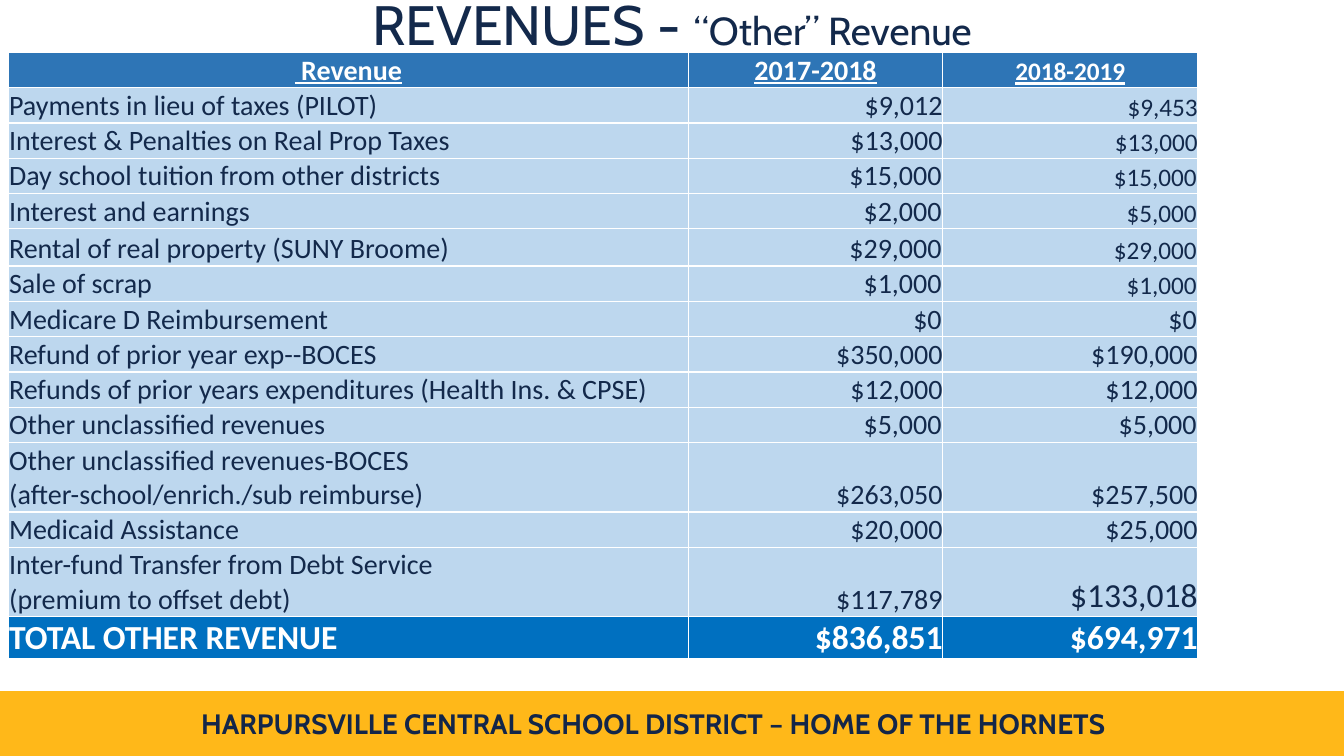
from lxml import etree
from pptx import Presentation
from pptx.dml.color import RGBColor
from pptx.enum.shapes import MSO_SHAPE
from pptx.enum.text import MSO_ANCHOR, MSO_AUTO_SIZE, PP_ALIGN
from pptx.oxml.ns import qn
from pptx.util import Inches, Pt

LEFT, CENTER, RIGHT = PP_ALIGN.LEFT, PP_ALIGN.CENTER, PP_ALIGN.RIGHT
BOTTOM, MIDDLE = MSO_ANCHOR.BOTTOM, MSO_ANCHOR.MIDDLE
NAVY, WHITE, GOLD = "13294B", "FFFFFF", "FFB819"
HEADER_BLUE, BODY_BLUE, TOTAL_BLUE = "2E75B6", "BDD7EE", "0070C0"

# Revenue source, 2017-2018, 2018-2019
ROWS = [
    (" Revenue", "2017-2018", "2018-2019"),
    ("Payments in lieu of taxes (PILOT)", "$9,012", "$9,453"),
    ("Interest & Penalties on Real Prop Taxes", "$13,000", "$13,000"),
    ("Day school tuition from other districts", "$15,000", "$15,000"),
    ("Interest and earnings", "$2,000", "$5,000"),
    ("Rental of real property (SUNY Broome)", "$29,000", "$29,000"),
    ("Sale of scrap", "$1,000", "$1,000"),
    ("Medicare D Reimbursement", "$0", "$0"),
    ("Refund of prior year exp--BOCES", "$350,000", "$190,000"),
    ("Refunds of prior years expenditures (Health Ins. & CPSE)", "$12,000", "$12,000"),
    ("Other unclassified revenues", "$5,000", "$5,000"),
    ("Other unclassified revenues-BOCES\v(after-school/enrich./sub reimburse)",
     "$263,050", "$257,500"),
    ("Medicaid Assistance", "$20,000", "$25,000"),
    ("Inter-fund Transfer from Debt Service\n(premium to offset debt)",
     "$117,789", "$133,018"),
    ("TOTAL OTHER REVENUE", "$836,851", "$694,971"),
]
TOTAL_ROW = len(ROWS) - 1
COLUMN_WIDTHS = [6.75, 2.52, 2.53]
ROW_HEIGHT = 0.35
SPECIAL_HEIGHTS = {5: 0.37, 11: 0.69, 13: 0.69, TOTAL_ROW: 0.41}
FLUSH_ROWS = {1, 2, 8, 9, 11, 12, 13, TOTAL_ROW}


def rgb(value):
    return RGBColor.from_string(value)


def format_font(font, color, **values):
    font.color.rgb = rgb(color)
    for name, value in values.items():
        setattr(font, name, value)


deck = Presentation()
deck.slide_width, deck.slide_height = Inches(13.33), Inches(7.5)
page = deck.slides.add_slide(deck.slide_layouts[5])

# Footer
band = page.shapes.add_shape(MSO_SHAPE.RECTANGLE, 0, Inches(6.86),
                             Inches(13.33), Inches(0.63))
band.shadow.inherit = False
band.fill.solid()
band.fill.fore_color.rgb = rgb(GOLD)
band.line.color.rgb = rgb(GOLD)
band.line.width = Pt(1)

footer = page.shapes.add_textbox(Inches(1.76), Inches(6.96), Inches(9.44), Inches(0.44))
footer.text_frame.word_wrap = True
para = footer.text_frame.paragraphs[0]
para.alignment = CENTER
span = para.add_run()
span.text = "HARPURSVILLE CENTRAL SCHOOL DISTRICT – HOME OF THE HORNETS"
format_font(span.font, "132649", name="Cabin", size=Pt(20), bold=True)

# Title
title = page.shapes.title
title.left, title.top, title.width, title.height = 0, 0, Inches(13.33), Inches(0.54)
title.fill.solid()
title.fill.fore_color.rgb = rgb(WHITE)
title.text_frame.word_wrap = True
title.text_frame.auto_size = MSO_AUTO_SIZE.NONE
title.text_frame.vertical_anchor = MIDDLE
para = title.text_frame.paragraphs[0]
para.alignment = CENTER
para.line_spacing = 0.9
for text, size in [("REVENUES - ", 39.6), ("“Other” Revenue", 27.9)]:
    span = para.add_run()
    span.text = text
    format_font(span.font, NAVY, name="Cabin", size=Pt(size))

# Revenue table
heights = [SPECIAL_HEIGHTS.get(row, ROW_HEIGHT) for row in range(len(ROWS))]
table = page.shapes.add_table(len(ROWS), len(COLUMN_WIDTHS), Inches(0.08), Inches(0.52),
                              Inches(sum(COLUMN_WIDTHS)), Inches(sum(heights))).table
table.first_row = table.horz_banding = False
for column, width in zip(table.columns, COLUMN_WIDTHS):
    column.width = Inches(width)

for row, texts in enumerate(ROWS):
    table.rows[row].height = Inches(heights[row])
    is_header, is_total = row == 0, row == TOTAL_ROW
    fill = HEADER_BLUE if is_header else TOTAL_BLUE if is_total else BODY_BLUE
    for col, text in enumerate(texts):
        cell = table.cell(row, col)
        inset = Inches(0 if col and row in FLUSH_ROWS else 0.01)
        cell.margin_left = cell.margin_right = cell.margin_top = inset
        cell.margin_bottom = 0
        cell.vertical_anchor = BOTTOM

        properties = cell._tc.get_or_add_tcPr()
        for side in ("a:lnL", "a:lnR", "a:lnT", "a:lnB"):
            border = etree.SubElement(properties, qn(side), w=str(Pt(1)))
            paint = etree.SubElement(border, qn("a:solidFill"))
            etree.SubElement(paint, qn("a:srgbClr"), val=WHITE)
        cell.fill.solid()
        cell.fill.fore_color.rgb = rgb(fill)

        size = 20
        if is_total or text == "$133,018":
            size = 24
        elif col == 2 and row <= 6:
            size = 18
        cell.text_frame.text = text
        for para in cell.text_frame.paragraphs:
            para.alignment = CENTER if is_header else RIGHT if col else LEFT
            for span in para.runs:
                format_font(span.font, WHITE if is_header or is_total else NAVY,
                            name="Calibri", size=Pt(size),
                            bold=is_header or is_total, underline=is_header)

deck.save("out.pptx")
